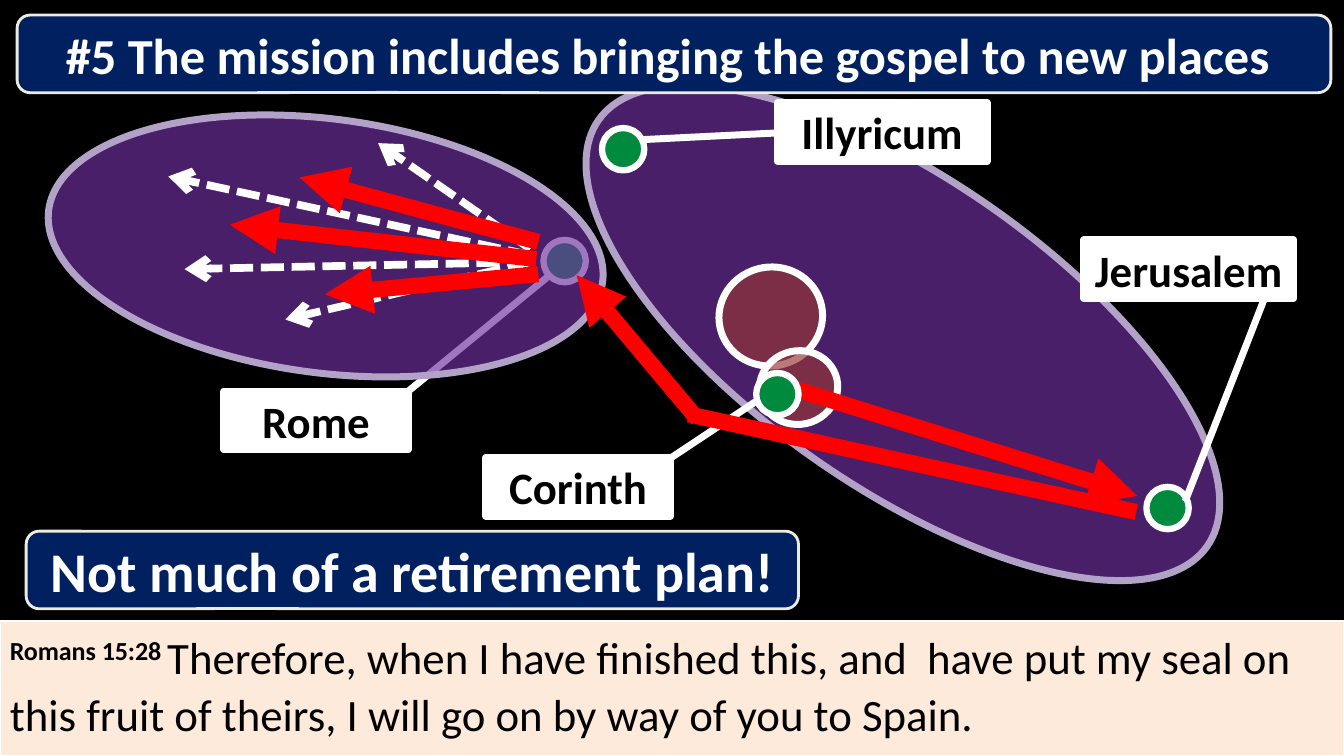
from lxml import etree
from pptx import Presentation, util as u
from pptx.dml.color import RGBColor
from pptx.enum import dml, shapes, text
from pptx.oxml.ns import qn

BLACK = RGBColor(0x00, 0x00, 0x00)
WHITE = RGBColor(0xFF, 0xFF, 0xFF)
RED = RGBColor(0xFF, 0x00, 0x00)
GREEN = RGBColor(0x00, 0x8A, 0x3E)
PURPLE = RGBColor(0x70, 0x30, 0xA0)
LILAC = RGBColor(0xB3, 0xA2, 0xC7)
MAROON = RGBColor(0x95, 0x37, 0x35)
NAVY = RGBColor(0x00, 0x20, 0x60)
CREAM = RGBColor(0xEE, 0xEC, 0xE1)
PEACH = RGBColor(0xFD, 0xEA, 0xDA)
KIND = shapes.MSO_SHAPE
CITY_MARKER = {"kind": KIND.OVAL, "fill": GREEN, "line": WHITE, "weight": 4.5}
MARKER_SIZE = (0.42, 0.42)

presentation = Presentation()
presentation.slide_width = u.Inches(13.33)
presentation.slide_height = u.Inches(7.5)
COLUMN = presentation.slide_width / 13.33
ROW = presentation.slide_height / 7.5
slide = presentation.slides.add_slide(presentation.slide_layouts[6])
slide.background.fill.solid()
slide.background.fill.fore_color.rgb = BLACK


def add_figure(kind, box, fill, line, weight, adjustments=(), rotation=0, opacity=None,
               runs=(), size=32, color=BLACK, centred=True):
    """Draw a shape; box is left, top, width, height in columns and rows; runs are (text, format)."""
    left, top, width, height = box
    shape = slide.shapes.add_shape(kind, int(left * COLUMN), int(top * ROW),
                                   int(width * COLUMN), int(height * ROW))
    shape.shadow.inherit = False
    shape.rotation = rotation
    for index, value in enumerate(adjustments):
        shape.adjustments[index] = value
    shape.fill.solid()
    shape.fill.fore_color.rgb = fill
    if opacity:
        fill_color = shape._element.spPr.find(qn("a:solidFill") + "/" + qn("a:srgbClr"))
        etree.SubElement(fill_color, qn("a:alpha"), val=str(opacity * 1000))
    shape.line.color.rgb = line
    shape.line.width = u.Pt(weight)
    frame = shape.text_frame
    frame.word_wrap = not centred
    frame.vertical_anchor = text.MSO_ANCHOR.MIDDLE if centred else text.MSO_ANCHOR.TOP
    paragraph = frame.paragraphs[0]
    paragraph.alignment = text.PP_ALIGN.CENTER if centred else text.PP_ALIGN.LEFT
    for words, extra in runs:
        run = paragraph.add_run()
        run.text = words
        run.font.color.rgb = color
        for name, value in {"name": "Calibri", "size": u.Pt(size), "bold": True, **extra}.items():
            setattr(run.font, name, value)
    return shape


def add_route(start, end, color, weight, head=None, dash=None):
    connector = slide.shapes.add_connector(
        shapes.MSO_CONNECTOR.STRAIGHT, int(start[0] * COLUMN), int(start[1] * ROW),
        int(end[0] * COLUMN), int(end[1] * ROW))
    connector.line.color.rgb = color
    connector.line.width = u.Pt(weight)
    if dash:
        connector.line.dash_style = dash
    properties = connector._element.spPr
    if head:
        etree.SubElement(properties.find(qn("a:ln")), qn("a:tailEnd"), type=head)
    etree.SubElement(properties, qn("a:effectLst"))


# Right ellipse, city markers and their labels
add_figure(KIND.OVAL, (5.27, 1.78, 7.37, 3.05), PURPLE, LILAC, 5, rotation=35, opacity=66)
for corner in [(5.97, 1.27), (11.37, 4.83), (5.39, 2.38)]:
    add_figure(box=corner + MARKER_SIZE, **CITY_MARKER)
for city, left, top, width, leader in [
    ("Corinth", 4.82, 4.54, 1.83, (-0.97, 1.467, 0.041, 0.985)),
    ("Illyricum", 7.71, 1.02, 2.08, (0.632, -0.653, 0.514, 0.005)),
    ("Jerusalem", 10.75, 2.38, 2.08, (4.471, 0.483, 0.921, 0.87)),
    ("Rome", 2.22, 3.88, 1.83, (-1.951, 1.754, 0.041, 0.985)),
]:
    add_figure(KIND.LINE_CALLOUT_1, (left, top, width, 0.58), WHITE, WHITE, 5,
               adjustments=leader, runs=[(city, {})])

# Verse
verse = add_figure(
    KIND.RECTANGLE, (0, 6.16, 13.33, 1.34), PEACH, WHITE, 1.5, centred=False,
    runs=[("Romans 15:28 ", {}),
          ("Therefore, when I have finished this, and  have put my seal on this fruit of theirs, "
           "I will go on by way of you to Spain.", {"bold": False})])
verse_paragraph = verse.text_frame.paragraphs[0]
verse_paragraph.line_spacing = 1.07
verse_paragraph.runs[0]._r.get_or_add_rPr().set("baseline", "30000")

# Left ellipse with dashed arrows
add_figure(KIND.OVAL, (0.46, 1.18, 5.54, 2.52), PURPLE, LILAC, 5, rotation=7.4, opacity=66)
for start_row, end in [(2.47, (3.75, 1.42)), (2.53, (1.67, 1.75)),
                       (2.6, (1.83, 2.67)), (2.6, (2.83, 3.17))]:
    add_route((5.26, start_row), end, WHITE, 5.5, "arrow", dml.MSO_LINE.SQUARE_DOT)

# Maroon circles, then the red route from Corinth to Jerusalem, Rome and onward
for box in [(7.13, 2.65, 1.03, 0.98), (7.53, 3.48, 0.78, 0.73)]:
    add_figure(KIND.OVAL, box, MAROON, WHITE, 5, rotation=347.4, opacity=66)
add_route((7.92, 3.87), (11.28, 4.92), RED, 11.5, "triangle")
add_figure(box=(7.5, 3.7) + MARKER_SIZE, **CITY_MARKER)
for start, end, head in [
    ((11.27, 5.08), (6.83, 4.11), None),
    ((6.92, 4.16), (5.72, 2.73), "triangle"),
    ((5.34, 2.72), (3.22, 2.92), "triangle"),
    ((5.32, 2.57), (2.28, 2.23), "triangle"),
    ((5.34, 2.4), (2.97, 1.76), "triangle"),
]:
    add_route(start, end, RED, 11.5, head)

# Banners
for words, size, left, top, width in [
    ("#5 The mission includes bringing the gospel to new places ", 36, 0.17, 0.15, 13.03),
    ("Not much of a retirement plan!", 40, 0.26, 5.27, 7.66),
]:
    add_figure(KIND.ROUNDED_RECTANGULAR_CALLOUT, (left, top, width, 0.77), NAVY, CREAM, 2,
               adjustments=(-0.219, 0.496, 0.167), runs=[(words, {})], size=size, color=WHITE)

presentation.save("out.pptx")
